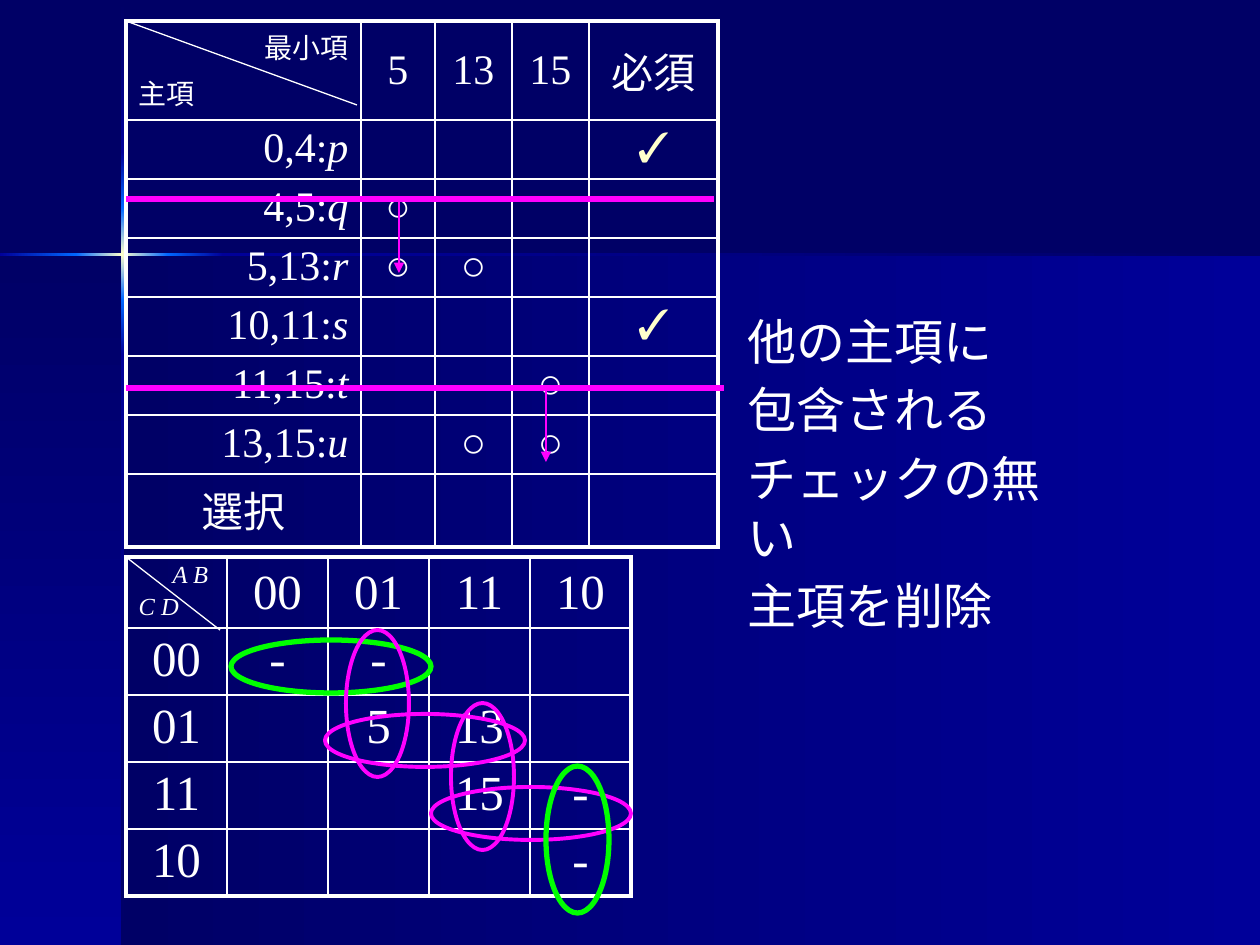
from dataclasses import dataclass
from itertools import pairwise

from lxml import etree
from pptx import Presentation, util as u
from pptx.dml.color import RGBColor
from pptx.enum import shapes, text
from pptx.oxml.ns import qn

PX = 914400 / 126
FONT = "Times New Roman"
WHITE, PINK, GREEN, CREAM = "FFFFFF", "FF00FF", "00FF00", "FFFFCC"
NAVY, BLUE, SKY = "000066", "000099", "0066FF"
LEFT, MID, RIGHT = text.PP_ALIGN.LEFT, text.PP_ALIGN.CENTER, text.PP_ALIGN.RIGHT


@dataclass
class Para:
    plain: str = ""
    slant: str = ""
    size: int = 24
    side: text.PP_ALIGN = MID
    tint: str = WHITE


@dataclass
class Grid:
    x: int
    y: int
    cols: list[int]
    rows: list[int]
    cells: dict[tuple[int, int], list[Para]]


@dataclass
class Line:
    x1: int
    y1: int
    x2: int
    y2: int
    tint: str
    width: float
    arrow: bool = False


@dataclass
class Oval:
    x: int
    y: int
    w: int
    h: int
    tint: str
    width: float


def px(n: float) -> int:
    return round(n * PX)


def rgb(code: str) -> RGBColor:
    return RGBColor.from_string(code)


def write(frame, paras: list[Para]) -> None:
    for i, item in enumerate(paras):
        para = frame.paragraphs[0] if i == 0 else frame.add_paragraph()
        para.alignment = item.side
        para.space_before = u.Pt(round(item.size * 0.2, 1))
        for words, slant in ((item.plain, False), (item.slant, True)):
            if words:
                run = para.add_run()
                run.text = words
                run.font.name, run.font.size = FONT, u.Pt(item.size)
                run.font.italic = slant
                run.font.color.rgb = rgb(item.tint)


def blend(slide, x: int, y: int, w: int, h: int, start: str, end: str, down: bool) -> None:
    box = slide.shapes.add_shape(shapes.MSO_SHAPE.RECTANGLE, px(x), px(y), px(w), px(h))
    box.shadow.inherit = False
    box.line.fill.background()
    box.fill.gradient()
    box.fill.gradient_angle = 270 if down else 0
    for stop, code in zip(box.fill.gradient_stops, (start, end)):
        stop.color.rgb = rgb(code)


def edge(cell, side: str, width: float) -> None:
    line = etree.SubElement(cell._tc.get_or_add_tcPr(), qn(f"a:ln{side}"), w=str(u.Pt(width)))
    fill = etree.SubElement(line, qn("a:solidFill"))
    etree.SubElement(fill, qn("a:srgbClr"), val=WHITE)


def draw_grid(slide, grid: Grid) -> None:
    nr, nc = len(grid.rows), len(grid.cols)
    table = slide.shapes.add_table(nr, nc, px(grid.x), px(grid.y),
                                   px(sum(grid.cols)), px(sum(grid.rows))).table
    table.first_row = table.horz_banding = False
    for col, w in zip(table.columns, grid.cols):
        col.width = px(w)
    for row, h in zip(table.rows, grid.rows):
        row.height = px(h)
    for r in range(nr):
        for c in range(nc):
            cell = table.cell(r, c)
            cell.margin_top = cell.margin_bottom = px(5)
            if r == 0 and c > 0:
                cell.vertical_anchor = text.MSO_ANCHOR.MIDDLE
            outer = {"L": c == 0, "R": c == nc - 1, "T": r == 0, "B": r == nr - 1}
            for side, thick in outer.items():
                edge(cell, side, 2.25 if thick else 1)
            cell.fill.background()
            write(cell.text_frame, grid.cells.get((r, c), []))


def draw_line(slide, item: Line) -> None:
    line = slide.shapes.add_connector(shapes.MSO_CONNECTOR.STRAIGHT, px(item.x1), px(item.y1),
                                      px(item.x2), px(item.y2))
    line.line.color.rgb = rgb(item.tint)
    line.line.width = u.Pt(item.width)
    if item.arrow:
        etree.SubElement(line.line._get_or_add_ln(), qn("a:tailEnd"), type="triangle")
    etree.SubElement(line._element.spPr, qn("a:effectLst"))


def draw_oval(slide, item: Oval) -> None:
    oval = slide.shapes.add_shape(shapes.MSO_SHAPE.OVAL, px(item.x), px(item.y),
                                  px(item.w), px(item.h))
    oval.shadow.inherit = False
    oval.fill.background()
    oval.line.color.rgb = rgb(item.tint)
    oval.line.width = u.Pt(item.width)


def backdrop(slide) -> None:
    slide.background.fill.solid()
    slide.background.fill.fore_color.rgb = rgb(NAVY)
    blend(slide, 122, 255, 1138, 690, NAVY, BLUE, False)
    blend(slide, 0, 255, 122, 690, NAVY, BLUE, True)
    # Glowing cross
    glow = [BLUE, SKY, CREAM, SKY, BLUE, NAVY]
    tall = zip(pairwise([1, 152, 208, 254, 300, 355, 945]), pairwise([NAVY] + glow))
    for (a, b), tints in tall:
        blend(slide, 121, a, 3, b - a, *tints, True)
    for (a, b), tints in zip(pairwise([0, 76, 122, 168, 223, 1260]), pairwise(glow)):
        blend(slide, a, 253, b - a, 3, *tints, False)


def map_grid() -> Grid:
    codes = ["00", "01", "11", "10"]
    cells = {(0, 0): [Para(slant="A B ", size=14, side=RIGHT),
                      Para(slant="C D", size=14, side=LEFT)]}
    for i, code in enumerate(codes, 1):
        cells[0, i] = cells[i, 0] = [Para(code, size=28)]
    marks = {(1, 1): "-", (1, 2): "-", (2, 2): "5", (2, 3): "13",
             (3, 3): "15", (3, 4): "-", (4, 4): "-"}
    cells |= {spot: [Para(mark, size=28)] for spot, mark in marks.items()}
    return Grid(126, 557, [101] * 5, [71] + [67] * 4, cells)


def term_grid() -> Grid:
    cells = {(0, 0): [Para("最小項", size=16, side=RIGHT), Para("主項", size=16, side=LEFT)],
             (8 - 1, 0): [Para("選択")]}
    for c, head in enumerate(["5", "13", "15", "必須"], 1):
        cells[0, c] = [Para(head)]
    terms = [("0,4:", "p"), ("4,5:", "q"), ("5,13:", "r"),
             ("10,11:", "s"), ("11,15:", "t"), ("13,15:", "u")]
    for r, (nums, name) in enumerate(terms, 1):
        cells[r, 0] = [Para(nums, name, side=RIGHT)]
    for spot in [(2, 1), (3, 1), (3, 2), (5, 3), (6, 2), (6, 3)]:
        cells[spot] = [Para("○")]
    for r in (1, 4):
        cells[r, 4] = [Para("✓", tint=CREAM)]
    return Grid(126, 21, [235, 74, 77, 77, 129], [99] + [59] * 6 + [73], cells)


def main() -> None:
    deck = Presentation()
    deck.slide_width, deck.slide_height = px(1260), px(945)
    slide = deck.slides.add_slide(deck.slide_layouts[6])
    backdrop(slide)

    # Karnaugh map with its loops
    draw_grid(slide, map_grid())
    draw_line(slide, Line(126, 557, 220, 630, WHITE, 0.75))
    for oval in [Oval(231, 640, 200, 53, GREEN, 3), Oval(325, 714, 200, 53, PINK, 2.25),
                 Oval(431, 787, 200, 53, PINK, 2.25), Oval(346, 630, 63, 147, PINK, 2.25),
                 Oval(451, 703, 63, 147, PINK, 2.25), Oval(546, 766, 63, 147, GREEN, 3)]:
        draw_oval(slide, oval)

    # Prime implicant table
    draw_grid(slide, term_grid())

    # Side remark
    note = slide.shapes.add_textbox(px(735), px(305), px(326), px(336)).text_frame
    note.word_wrap = True
    write(note, [Para(words, size=28, side=LEFT) for words in
                 ["他の主項に", "包含される", "チェックの無い", "主項を削除"]])

    # Header diagonal, arrows and strike-outs
    for line in [Line(126, 21, 357, 105, WHITE, 0.75),
                 Line(399, 199, 399, 273, PINK, 1.5, True),
                 Line(546, 388, 546, 462, PINK, 1.5, True),
                 Line(126, 199, 714, 199, PINK, 3), Line(126, 388, 724, 388, PINK, 3)]:
        draw_line(slide, line)
    deck.save("out.pptx")


if __name__ == "__main__":
    main()
